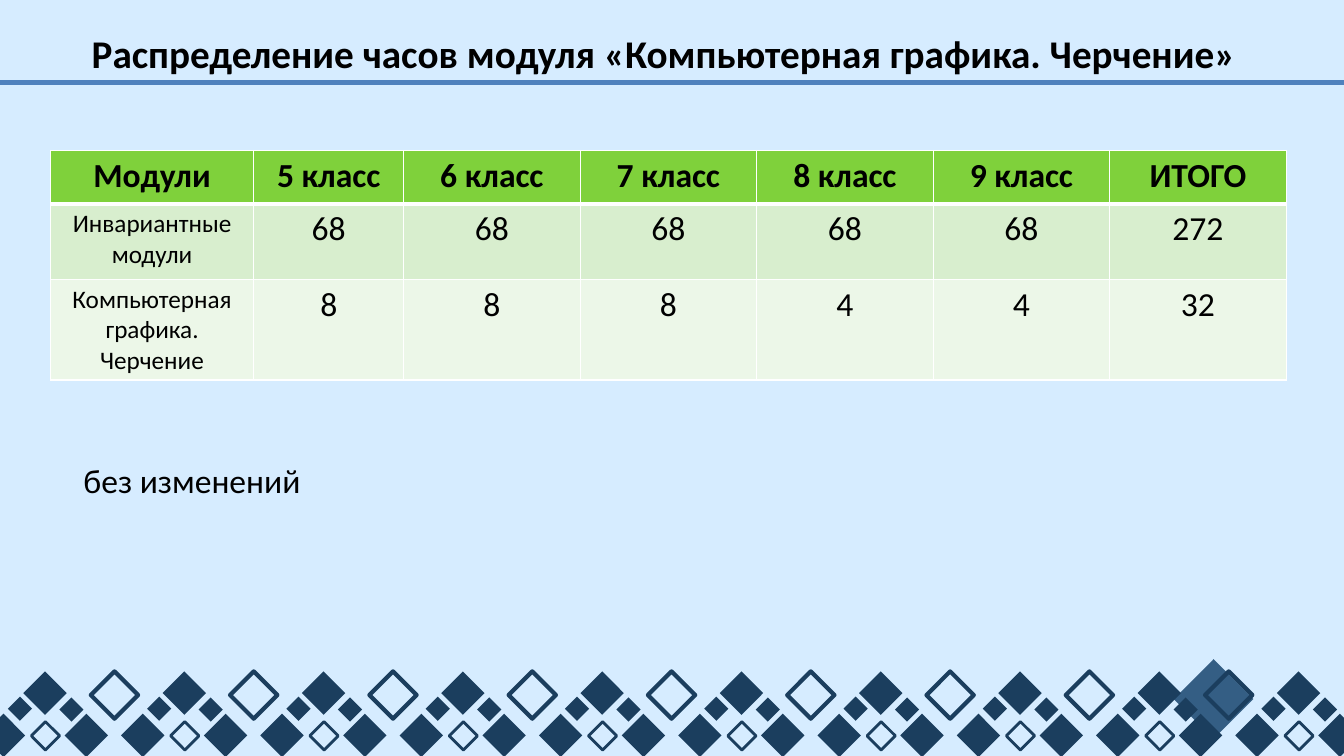
"""Build the slide on how the hours of the drawing module are distributed."""
from dataclasses import dataclass

import pptx
import pptx.dml.color
import pptx.enum.shapes
import pptx.enum.text
import pptx.oxml
import pptx.oxml.ns
import pptx.shapes.shapetree
import pptx.slide
import pptx.table
import pptx.text.text
import pptx.util

Pt = pptx.util.Pt
RGBColor = pptx.dml.color.RGBColor
Align = pptx.enum.text.PP_ALIGN
Shapes = pptx.shapes.shapetree.SlideShapes

SKY = RGBColor(0xD6, 0xEC, 0xFF)
NAVY = RGBColor(0x1B, 0x3E, 0x5E)
STEEL = RGBColor(0x34, 0x5E, 0x84)
RULE_BLUE = RGBColor(0x4F, 0x81, 0xBD)
BLACK = RGBColor(0x00, 0x00, 0x00)
WHITE = RGBColor(0xFF, 0xFF, 0xFF)
GREEN = RGBColor(0x7F, 0xD1, 0x3B)
LIGHT_GREEN = RGBColor(0xD8, 0xEE, 0xCE)
PALE_GREEN = RGBColor(0xEC, 0xF7, 0xE8)

SLIDE_WIDTH, SLIDE_HEIGHT = 960.48, 540
ORNAMENT_STEP = 99.54
COLUMN_WIDTHS = [145.4, 107.1] + [126.15] * 5

TITLE_FORMAT = {"name": "Calibri", "size": Pt(28), "bold": True}
HEADER_FORMAT = {"name": "Calibri", "size": Pt(24), "bold": True}
MODULE_FORMAT = {"name": "Calibri", "size": Pt(18), "bold": False}
BODY_FORMAT = {"name": "Calibri", "size": Pt(24), "bold": False}


@dataclass(frozen=True)
class Diamond:
    """A square-sided diamond, filled unless it has an outline width."""
    left: float
    top: float
    side: float
    color: RGBColor = NAVY
    outline: float = 0
    repeats: int = 10


@dataclass(frozen=True)
class HoursRow:
    """One table row with its look."""
    texts: list[str]
    height: float
    fill: RGBColor
    label_format: dict
    value_format: dict
    top_border: float = 1
    bottom_border: float = 1


@dataclass(frozen=True)
class Caption:
    """A line of text in its own box."""
    text: str
    left: float
    top: float
    width: float
    height: float
    align: Align
    format: dict


ORNAMENT = [
    Diamond(838.8, 470.9, 56.9, STEEL, repeats=1),
    Diamond(-13, 509.8, 31),
    Diamond(22.4, 515.5, 20.2, outline=2),
    Diamond(16.7, 479.6, 31),
    Diamond(46.2, 509.8, 31),
    Diamond(5.6, 497.6, 17.3),
    Diamond(42.4, 498.2, 17.3),
    Diamond(64.9, 479.6, 33.8, outline=3, repeats=9),
]

HOURS = [
    HoursRow(["Модули", *(f"{grade} класс" for grade in range(5, 10)), "ИТОГО"],
             38.3, GREEN, HEADER_FORMAT, HEADER_FORMAT, bottom_border=3),
    HoursRow(["Инвариантные модули", "68", "68", "68", "68", "68", "272"],
             53.8, LIGHT_GREEN, MODULE_FORMAT, BODY_FORMAT, top_border=3),
    HoursRow(["Компьютерная графика. Черчение", "8", "8", "8", "4", "4", "32"],
             72, PALE_GREEN, MODULE_FORMAT, BODY_FORMAT),
]

CAPTIONS = [
    Caption("Распределение часов модуля «Компьютерная графика. Черчение» ",
            30.2, 17.3, 894.2, 41, Align.CENTER, TITLE_FORMAT),
    Caption("без изменений", 52.6, 324.7, 513.4, 36, Align.LEFT, BODY_FORMAT),
]


def write(frame: pptx.text.text.TextFrame, text: str, align: Align, text_format: dict) -> None:
    """Put one formatted paragraph into a text frame."""
    paragraph = frame.paragraphs[0]
    paragraph.alignment = align
    run = paragraph.add_run()
    run.text = text
    for attribute, value in text_format.items():
        setattr(run.font, attribute, value)
    run.font.color.rgb = BLACK


def draw_diamonds(shapes: Shapes, diamond: Diamond) -> None:
    """Draw a diamond at every step of the ornament."""
    for step in range(diamond.repeats):
        tile = shapes.add_shape(
            pptx.enum.shapes.MSO_SHAPE.DIAMOND,
            Pt(diamond.left + step * ORNAMENT_STEP), Pt(diamond.top),
            Pt(diamond.side), Pt(diamond.side))
        tile.shadow.inherit = False
        if diamond.outline:
            tile.fill.background()
            tile.line.color.rgb = diamond.color
            tile.line.width = Pt(diamond.outline)
        else:
            tile.fill.solid()
            tile.fill.fore_color.rgb = diamond.color
            tile.line.fill.background()


def draw_title_rule(shapes: Shapes) -> None:
    """Draw the line under the title."""
    rule = shapes.add_connector(
        pptx.enum.shapes.MSO_CONNECTOR.STRAIGHT, Pt(0), Pt(59), Pt(SLIDE_WIDTH), Pt(59))
    rule.line.color.rgb = RULE_BLUE
    rule.line.width = Pt(3)
    rule._element.spPr.append(pptx.oxml.parse_xml(
        f"<a:effectLst {pptx.oxml.ns.nsdecls('a')}/>"))


def draw_caption(shapes: Shapes, caption: Caption) -> None:
    """Draw a text box."""
    box = shapes.add_textbox(
        Pt(caption.left), Pt(caption.top), Pt(caption.width), Pt(caption.height))
    box.text_frame.word_wrap = True
    box.text_frame.auto_size = pptx.enum.text.MSO_AUTO_SIZE.SHAPE_TO_FIT_TEXT
    write(box.text_frame, caption.text, caption.align, caption.format)


def set_borders(cell: pptx.table._Cell, top: float, bottom: float) -> None:
    """Give a cell white borders."""
    properties = cell._tc.get_or_add_tcPr()
    for side, width in {"L": 1, "R": 1, "T": top, "B": bottom}.items():
        properties.append(pptx.oxml.parse_xml(
            f'<a:ln{side} {pptx.oxml.ns.nsdecls("a")} w="{Pt(width)}">'
            f'<a:solidFill><a:srgbClr val="{WHITE}"/></a:solidFill></a:ln{side}>'))


def draw_hours(shapes: Shapes) -> None:
    """Draw the table of hours by module and grade."""
    hours = shapes.add_table(
        len(HOURS), len(COLUMN_WIDTHS), Pt(36), Pt(107.3),
        Pt(sum(COLUMN_WIDTHS)), Pt(sum(row.height for row in HOURS))).table
    for column, width in zip(hours.columns, COLUMN_WIDTHS):
        column.width = Pt(width)
    for table_row, row in zip(hours.rows, HOURS):
        table_row.height = Pt(row.height)
        for index, (cell, text) in enumerate(zip(table_row.cells, row.texts)):
            set_borders(cell, row.top_border, row.bottom_border)
            cell.fill.solid()
            cell.fill.fore_color.rgb = row.fill
            text_format = row.value_format if index else row.label_format
            write(cell.text_frame, text, Align.CENTER, text_format)


def main() -> None:
    """Build and save the presentation."""
    deck = pptx.Presentation()
    deck.slide_width, deck.slide_height = Pt(SLIDE_WIDTH), Pt(SLIDE_HEIGHT)
    slide = deck.slides.add_slide(deck.slide_layouts[6])
    slide.background.fill.solid()
    slide.background.fill.fore_color.rgb = SKY
    for diamond in ORNAMENT:
        draw_diamonds(slide.shapes, diamond)
    draw_title_rule(slide.shapes)
    for caption in CAPTIONS:
        draw_caption(slide.shapes, caption)
    draw_hours(slide.shapes)
    deck.save("out.pptx")


if __name__ == "__main__":
    main()
